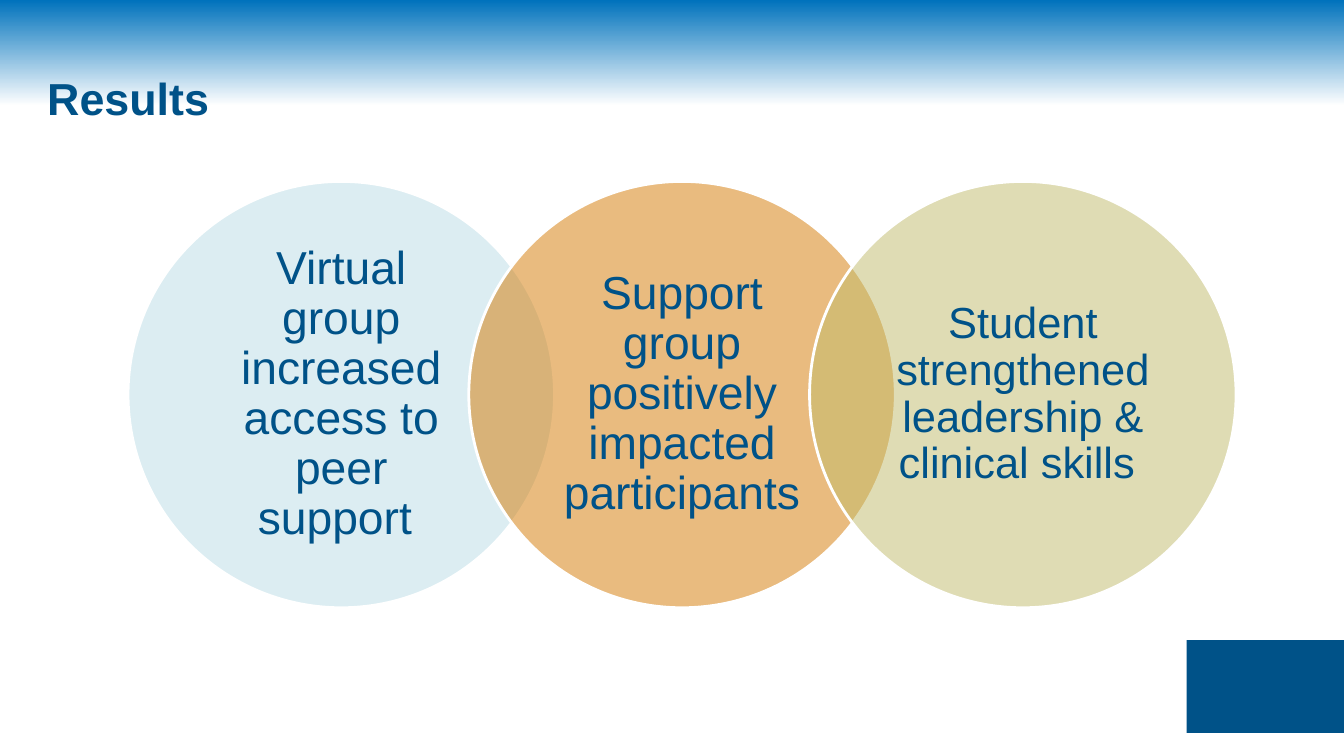
from lxml import etree
from pptx import Presentation
from pptx.dml.color import RGBColor
from pptx.enum.shapes import MSO_SHAPE
from pptx.enum.text import MSO_ANCHOR, PP_ALIGN
from pptx.oxml.ns import qn
from pptx.util import Inches, Pt

OVAL, RECTANGLE = MSO_SHAPE.OVAL, MSO_SHAPE.RECTANGLE
MIDDLE, LEFT, CENTER = MSO_ANCHOR.MIDDLE, PP_ALIGN.LEFT, PP_ALIGN.CENTER

NAVY, BLUE, WHITE = "005288", "0072BC", "FFFFFF"
RESULTS = [
    ("Virtual group increased access to peer support ", "BBDDE6", 33),
    ("Support group positively impacted participants", "D57800", 33),
    ("Student strengthened leadership & clinical skills ", "C1BB6B", 31),
]
CIRCLE_SIZE = 4.23
CIRCLE_STEP = 3.38


def color(hex_code):
    return RGBColor.from_string(hex_code)


def paint_background(page):
    """Fade from blue at the top edge to white."""
    fill = page.background.fill
    fill.gradient()
    fill.gradient_angle = 270
    for stop, hex_code, position in zip(fill.gradient_stops, (BLUE, WHITE), (0, 0.14)):
        stop.color.rgb = color(hex_code)
        stop.position = position


def add_filled(page, kind, box, hex_code):
    """Add a flat shape in a box of left, top, width and height in inches."""
    shape = page.shapes.add_shape(kind, *map(Inches, box))
    shape.shadow.inherit = False
    shape.fill.solid()
    shape.fill.fore_color.rgb = color(hex_code)
    shape.line.fill.background()
    return shape


def set_text(frame, text, size, align, bold=False):
    frame.word_wrap = True
    frame.vertical_anchor = MIDDLE
    para = frame.paragraphs[0]
    para.text = text
    para.alignment = align
    para.font.name = "Arial"
    para.font.size = Pt(size)
    para.font.bold = bold
    para.font.color.rgb = color(NAVY)
    return para


def add_title(page, box, text):
    title = page.shapes.add_textbox(*map(Inches, box))
    set_text(title.text_frame, text, 32, LEFT, bold=True)


def add_circle(page, box, text, hex_code, size):
    """Add a half-transparent circle with its result in the middle."""
    circle = add_filled(page, OVAL, box, hex_code)
    tint = circle.fill._xPr.find(qn("a:solidFill"))[0]
    etree.SubElement(tint, qn("a:alpha"), val="50000")
    circle.line.color.rgb = color(WHITE)
    circle.line.width = Pt(2)
    frame = circle.text_frame
    frame.margin_left = frame.margin_right = Inches(0.23)
    frame.margin_top = frame.margin_bottom = Inches(0.05)
    set_text(frame, text, size, CENTER).line_spacing = 0.9


def add_circle_row(page, left, top):
    for index, (text, hex_code, size) in enumerate(RESULTS):
        box = (left + index * CIRCLE_STEP, top, CIRCLE_SIZE, CIRCLE_SIZE)
        add_circle(page, box, text, hex_code, size)


def main():
    deck = Presentation()
    deck.slide_width, deck.slide_height = Inches(13.33), Inches(7.5)
    page = deck.slides.add_slide(deck.slide_layouts[6])
    paint_background(page)
    add_filled(page, RECTANGLE, (11.77, 6.35, 1.56, 0.92), NAVY)
    add_title(page, (0.37, 0.34, 9.37, 1.25), "Results")
    add_circle_row(page, 1.27, 1.8)
    deck.save("out.pptx")


if __name__ == "__main__":
    main()
